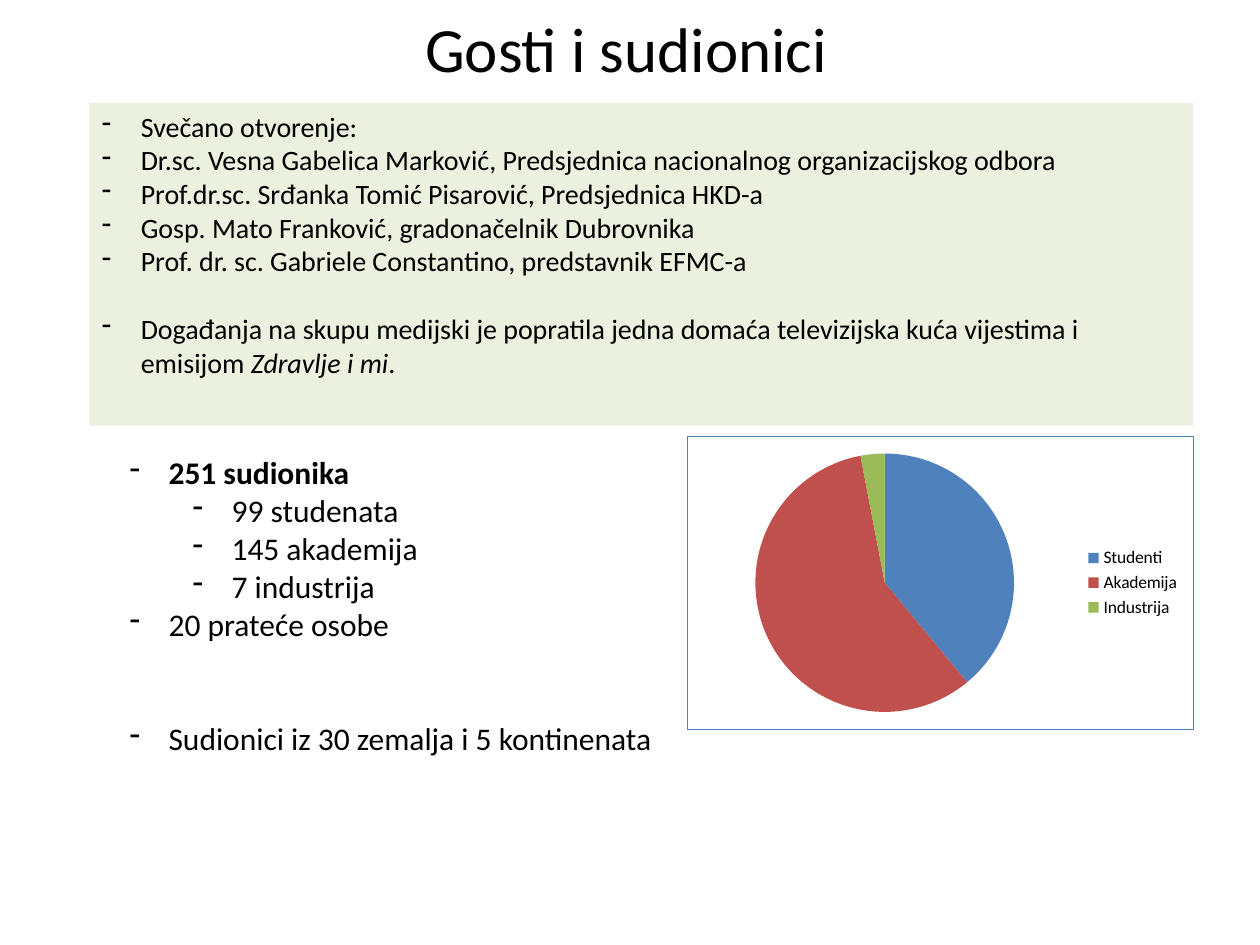
from dataclasses import dataclass
from lxml.etree import SubElement as Sub
from pptx import Presentation
from pptx.chart.data import CategoryChartData as Data
from pptx.dml.color import RGBColor as Rgb
from pptx.enum.chart import XL_CHART_TYPE as Kind, XL_LEGEND_POSITION as Side
from pptx.enum.shapes import MSO_SHAPE as Form
from pptx.enum.text import MSO_ANCHOR as Anchor, MSO_AUTO_SIZE as Auto, PP_ALIGN as Align
from pptx.oxml import parse_xml
from pptx.oxml.ns import qn
from pptx.util import Inches, Pt

WIDE, HIGH = 10, 7.5
FACE = "Calibri"
INK, PALE, EDGE = "000000", "EBF1DE", "4F81BD"
LINE = 1.22  # line height as a share of the font size
HANG = 0.31
DRAW = "http://schemas.openxmlformats.org/drawingml/2006/main"
CHART = "http://schemas.openxmlformats.org/drawingml/2006/chart"


@dataclass
class Area:
    """A place given in percent of the slide."""
    x: float
    y: float
    w: float
    h: float

    def box(self) -> tuple:
        return (Inches(self.x * WIDE / 100), Inches(self.y * HIGH / 100),
                Inches(self.w * WIDE / 100), Inches(self.h * HIGH / 100))


@dataclass
class Item:
    """A dash item; gap is counted in lines, tail is (italic, plain)."""
    text: str
    level: int = 0
    gap: int = 0
    bold: bool = False
    tail: tuple = ()


@dataclass
class Slice:
    name: str
    value: int
    tint: str


TITLE = Area(4.7, -0.93, 90, 11.87)
PANEL = Area(7.1, 10.93, 87.6, 34.13)
COUNT = Area(9.3, 47.33, 44, 33.6)
PIE = Area(54.5, 46.13, 40.2, 31.07)

GUESTS = [
    Item("Svečano otvorenje:"),
    Item("Dr.sc. Vesna Gabelica Marković, Predsjednica nacionalnog organizacijskog odbora"),
    Item("Prof.dr.sc. Srđanka Tomić Pisarović, Predsjednica HKD-a"),
    Item("Gosp. Mato Franković, gradonačelnik Dubrovnika"),
    Item("Prof. dr. sc. Gabriele Constantino, predstavnik EFMC-a"),
    Item("Događanja na skupu medijski je popratila jedna domaća televizijska kuća "
         "vijestima i emisijom ", gap=1, tail=("Zdravlje i mi", ".")),
]
CROWD = [
    Item("251 sudionika", bold=True),
    Item("99 studenata", level=1),
    Item("145 akademija", level=1),
    Item("7 industrija", level=1),
    Item("20 prateće osobe"),
    Item("Sudionici iz 30 zemalja i 5 kontinenata", gap=2),
]
SLICES = [Slice("Studenti", 39, "4F81BD"), Slice("Akademija", 58, "C0504D"),
          Slice("Industrija", 3, "9BBB59")]


def paint(color, tint: str) -> None:
    color.rgb = Rgb.from_string(tint)


def style(font, size: float) -> None:
    font.name, font.size = FACE, Pt(size)
    paint(font.color, INK)


def dash(para, level: int) -> None:
    para.level = level
    props = para._p.get_or_add_pPr()
    props.set("marL", str(Inches(HANG + level / 2)))
    props.set("indent", str(Inches(-HANG)))
    Sub(props, qn("a:buFontTx"))
    Sub(props, qn("a:buChar")).set("char", "-")


def write(frame, items: list[Item], size: float) -> None:
    for n, item in enumerate(items):
        para = frame.add_paragraph() if n else frame.paragraphs[0]
        para.alignment = Align.LEFT
        if item.gap:
            para.space_before = Pt(round(item.gap * size * LINE, 1))
        dash(para, item.level)
        style(para.font, size)
        para.font.bold = item.bold
        para.add_run().text = item.text
        for k, part in enumerate(item.tail):
            run = para.add_run()
            run.text = part
            run.font.italic = k == 0


def head(slide, text: str) -> None:
    frame = slide.shapes.add_textbox(*TITLE.box()).text_frame
    frame.word_wrap = True
    frame.vertical_anchor = Anchor.MIDDLE
    para = frame.paragraphs[0]
    para.text, para.alignment = text, Align.CENTER
    style(para.font, 36)


def panel(slide) -> None:
    shape = slide.shapes.add_shape(Form.RECTANGLE, *PANEL.box())
    shape.shadow.inherit = False
    shape.fill.solid()
    paint(shape.fill.fore_color, PALE)
    shape.line.fill.background()
    frame = shape.text_frame
    frame.word_wrap = True
    frame.vertical_anchor = Anchor.TOP
    write(frame, GUESTS, 16)


def count(slide) -> None:
    frame = slide.shapes.add_textbox(*COUNT.box()).text_frame
    frame.word_wrap = False
    frame.auto_size = Auto.SHAPE_TO_FIT_TEXT
    write(frame, CROWD, 18)


def pie(slide) -> None:
    data = Data()
    data.categories = [s.name for s in SLICES]
    data.add_series("Series 1", [s.value for s in SLICES])
    chart = slide.shapes.add_chart(Kind.PIE, *PIE.box(), data).chart
    chart.has_title = False
    chart.has_legend = True
    chart.legend.position = Side.RIGHT
    chart.legend.include_in_layout = False
    style(chart.font, 10)
    plot = chart.plots[0]
    plot.vary_by_categories = True
    for n, part in enumerate(SLICES):
        fill = plot.series[0].points[n].format.fill
        fill.solid()
        paint(fill.fore_color, part.tint)
    # Thin frame around the whole chart
    frame = parse_xml(
        f'<c:spPr xmlns:c="{CHART}" xmlns:a="{DRAW}"><a:noFill/><a:ln w="{Pt(0.25)}">'
        f'<a:solidFill><a:srgbClr val="{EDGE}"/></a:solidFill></a:ln></c:spPr>')
    chart._chartSpace.find(qn("c:txPr")).addprevious(frame)


def main() -> None:
    deck = Presentation()
    deck.slide_width, deck.slide_height = Inches(WIDE), Inches(HIGH)
    slide = deck.slides.add_slide(deck.slide_layouts[6])
    head(slide, "Gosti i sudionici")
    count(slide)
    pie(slide)
    panel(slide)
    deck.save("out.pptx")


if __name__ == "__main__":
    main()
